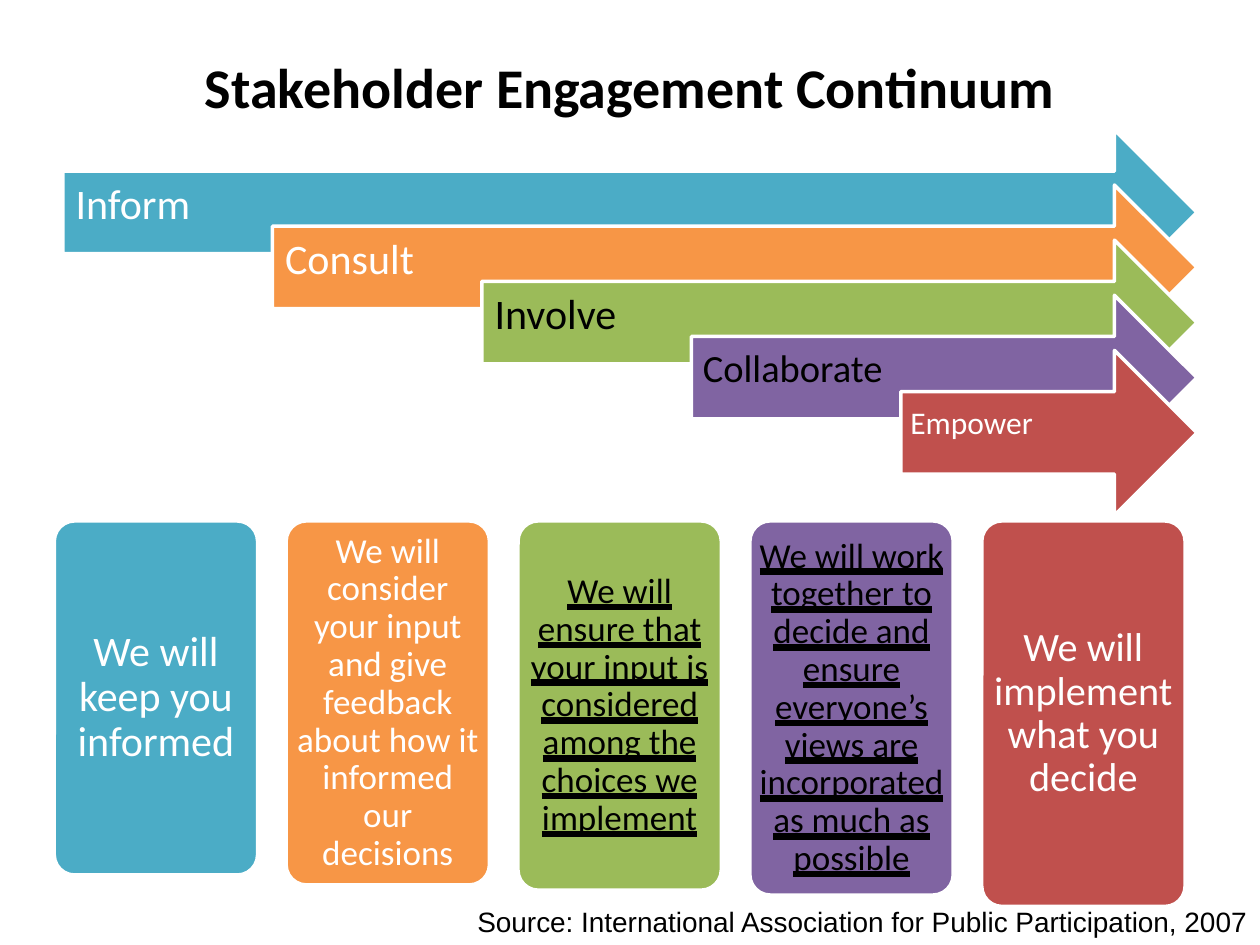
import pptx
import pptx.util
import pptx.dml.color
import pptx.enum.shapes
import pptx.enum.text
from dataclasses import dataclass

Pt = pptx.util.Pt
RGBColor = pptx.dml.color.RGBColor
MSO_SHAPE = pptx.enum.shapes.MSO_SHAPE
MSO_ANCHOR = pptx.enum.text.MSO_ANCHOR
MSO_AUTO_SIZE = pptx.enum.text.MSO_AUTO_SIZE
PP_ALIGN = pptx.enum.text.PP_ALIGN
HEAVY = pptx.enum.text.MSO_UNDERLINE.HEAVY_LINE


@dataclass(frozen=True)
class Theme:
    font: str = "Calibri"
    source_font: str = "Arial"
    title_size: int = 32
    source_size: int = 16
    line_width: int = 2
    dark: str = "000000"
    light: str = "FFFFFF"
    blue: str = "4BACC6"
    orange: str = "F79646"
    green: str = "9BBB59"
    purple: str = "8064A2"
    red: str = "C0504D"


THEME = Theme()

TITLE = "Stakeholder Engagement Continuum"
SOURCE = "Source: International Association for Public Participation, 2007"

# level, level size, promise, promise size, card height, fill, text colour, underline
LEVELS = [
    ("Inform", 24, "We will keep you informed", 24, 202.3,
     THEME.blue, THEME.light, False),
    ("Consult", 24,
     "We will consider your input and give feedback about how it informed our decisions",
     20, 208, THEME.orange, THEME.light, False),
    ("Involve", 24,
     "We will ensure that your input is considered among the choices we implement",
     20, 211, THEME.green, THEME.dark, HEAVY),
    ("Collaborate", 22,
     "We will work together to decide and ensure everyone’s views are incorporated "
     "as much as possible",
     20, 213.8, THEME.purple, THEME.dark, HEAVY),
    ("Empower", 18, "We will implement what you decide", 23, 220.3,
     THEME.red, THEME.light, False),
]

ARROW_LEFT, ARROW_TOP, ARROW_RIGHT, ARROW_HEIGHT = 36, 74.2, 684, 94.3
ARROW_STEP_X, ARROW_STEP_Y = 119.7, 31.5
CARD_LEFT, CARD_TOP, CARD_WIDTH, CARD_STEP = 31, 297.7, 116.2, 132.5
CARD_INSETS = (1.5, 2.2, 1.5, 2.2)


def write_text(shape, text, size, color, align, font=THEME.font,
               bold=False, underline=False, spacing=None):
    paragraph = shape.text_frame.paragraphs[0]
    paragraph.alignment = align
    if spacing:
        paragraph.line_spacing = spacing
    run = paragraph.add_run()
    run.text = text
    run.font.name = font
    run.font.size = Pt(size)
    run.font.bold = bold
    run.font.underline = underline
    run.font.color.rgb = RGBColor.from_string(color)


def place(shape, left, top, width, height):
    shape.left, shape.top = Pt(left), Pt(top)
    shape.width, shape.height = Pt(width), Pt(height)


def add_block(slide, kind, box, adjustments, fill, insets):
    shape = slide.shapes.add_shape(kind, *(Pt(length) for length in box))
    for index, value in enumerate(adjustments):
        shape.adjustments[index] = value
    shape.shadow.inherit = False
    shape.fill.solid()
    shape.fill.fore_color.rgb = RGBColor.from_string(fill)
    shape.line.color.rgb = RGBColor.from_string(THEME.light)
    shape.line.width = Pt(THEME.line_width)
    frame = shape.text_frame
    frame.word_wrap = True
    frame.vertical_anchor = MSO_ANCHOR.MIDDLE
    (frame.margin_left, frame.margin_top,
     frame.margin_right, frame.margin_bottom) = (Pt(inset) for inset in insets)
    return shape


def add_level_arrow(slide, index, text, size, fill, color):
    left = ARROW_LEFT + index * ARROW_STEP_X
    box = (left, ARROW_TOP + index * ARROW_STEP_Y, ARROW_RIGHT - left, ARROW_HEIGHT)
    inset = 0.3 * size
    arrow = add_block(slide, MSO_SHAPE.RIGHT_ARROW, box, (0.5, 0.5), fill,
                      (inset, inset, 20, 15))
    write_text(arrow, text, size, color, PP_ALIGN.LEFT, spacing=0.9)


def add_promise_card(slide, index, text, size, height, fill, color, underline):
    box = (CARD_LEFT + index * CARD_STEP, CARD_TOP, CARD_WIDTH, height)
    card = add_block(slide, MSO_SHAPE.ROUNDED_RECTANGLE, box, (0.1,), fill, CARD_INSETS)
    write_text(card, text, size, color, PP_ALIGN.CENTER,
               underline=underline, spacing=0.9)


def main():
    presentation = pptx.Presentation()
    presentation.slide_width, presentation.slide_height = Pt(720), Pt(540)
    slide = presentation.slides.add_slide(presentation.slide_layouts[5])

    title = slide.shapes.title
    place(title, 36, 25.2, 648, 47.5)
    title.text_frame.vertical_anchor = MSO_ANCHOR.MIDDLE
    write_text(title, TITLE, THEME.title_size, THEME.dark, PP_ALIGN.CENTER, bold=True)

    for index, (level, level_size, *_, fill, color, _) in enumerate(LEVELS):
        add_level_arrow(slide, index, level, level_size, fill, color)
    for index, (_, _, *promise) in enumerate(LEVELS):
        add_promise_card(slide, index, *promise)

    source = slide.shapes.add_textbox(Pt(265.7), Pt(513.4), Pt(499.7), Pt(26.6))
    source.text_frame.word_wrap = True
    source.text_frame.auto_size = MSO_AUTO_SIZE.SHAPE_TO_FIT_TEXT
    write_text(source, SOURCE, THEME.source_size, THEME.dark, PP_ALIGN.LEFT,
               font=THEME.source_font)

    presentation.save("out.pptx")


if __name__ == "__main__":
    main()
